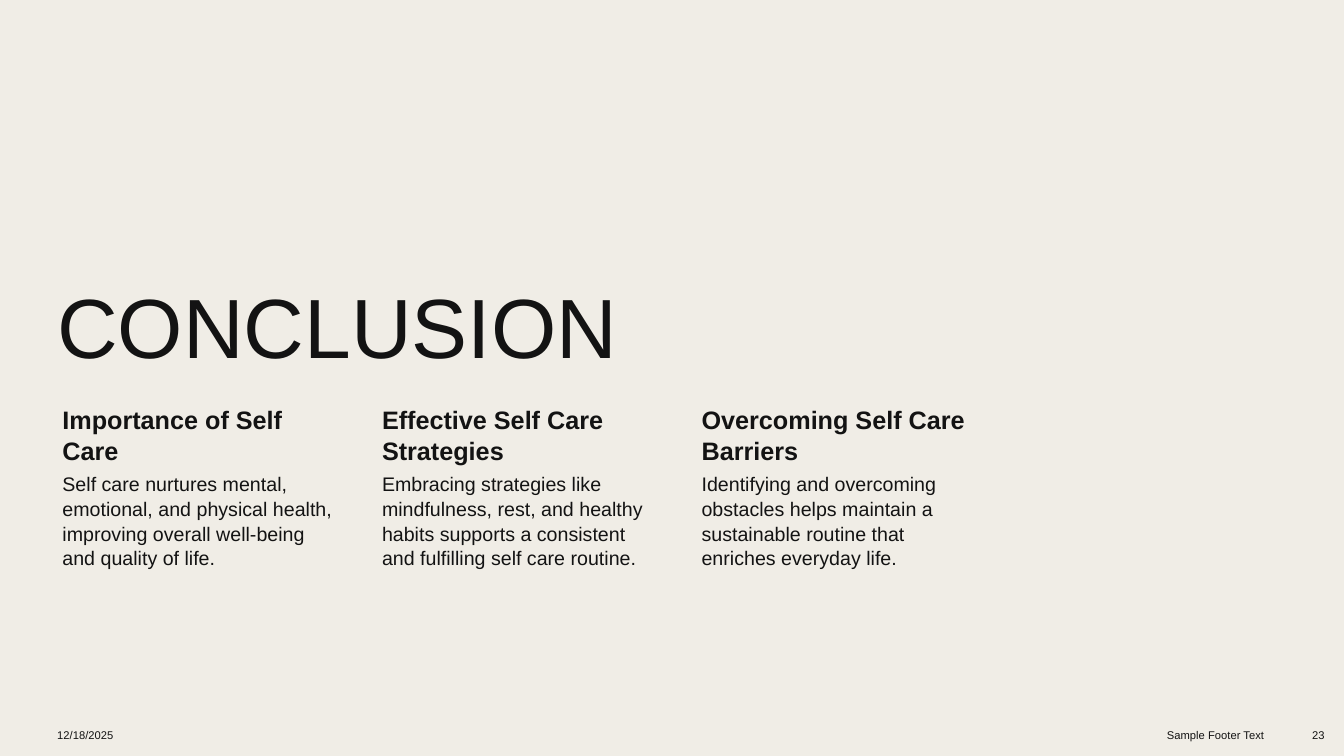
from pptx import Presentation
from pptx.dml.color import RGBColor
from pptx.enum.text import MSO_ANCHOR, PP_ALIGN
from pptx.util import Pt

COLORS = {"paper": "F0EDE6", "ink": "131313"}
FONT = "Arial"
POINTS = [
    ("Importance of Self Care",
     "Self care nurtures mental, emotional, and physical health, "
     "improving overall well-being and quality of life."),
    ("Effective Self Care Strategies",
     "Embracing strategies like mindfulness, rest, and healthy habits "
     "supports a consistent and fulfilling self care routine."),
    ("Overcoming Self Care Barriers",
     "Identifying and overcoming obstacles helps maintain a "
     "sustainable routine that enriches everyday life."),
]


def write(slide, text, box, size, bold=False, align=PP_ALIGN.LEFT,
          anchor=MSO_ANCHOR.TOP, inset=(7.2, 3.6, 7.2, 3.6), line=1.05, after=0):
    frame = slide.shapes.add_textbox(*map(Pt, box)).text_frame
    frame.word_wrap = True
    frame.vertical_anchor = anchor
    (frame.margin_left, frame.margin_top,
     frame.margin_right, frame.margin_bottom) = map(Pt, inset)
    para = frame.paragraphs[0]
    para.alignment = align
    para.line_spacing = line
    para.space_after = Pt(after)
    run = para.add_run()
    run.text = text
    font = run.font
    font.name, font.size, font.bold = FONT, Pt(size), bold
    font.color.rgb = RGBColor.from_string(COLORS["ink"])


def add_title(slide, box):
    write(slide, "CONCLUSION", box, 60, anchor=MSO_ANCHOR.BOTTOM, line=0.9)


def add_points(slide, box):
    left, top, width, height = box
    gap, head = 20.9, 50
    wide = (width - gap * (len(POINTS) - 1)) / len(POINTS)
    for i, (title, body) in enumerate(POINTS):
        x = left + i * (wide + gap)
        write(slide, title, (x, top, wide, head), 18, bold=True,
              inset=(10.8, 2.2, 2.2, 2.2))
        write(slide, body, (x, top + head, wide, height - head), 14,
              inset=(10.8, 1.4, 1.4, 1.4))


def add_footer(slide, box):
    left, top, width, height = box
    right = left + width
    for text, x, wide, align in [
        ("12/18/2025", left, 224, PP_ALIGN.LEFT),
        ("Sample Footer Text", right - 252.7, 209.5, PP_ALIGN.RIGHT),
        ("23", right - 36, 36, PP_ALIGN.RIGHT),
    ]:
        write(slide, text, (x, top, wide, height), 8, align=align,
              anchor=MSO_ANCHOR.MIDDLE, after=6)


def main():
    deck = Presentation()
    deck.slide_width, deck.slide_height = Pt(960), Pt(540)
    slide = deck.slides.add_slide(deck.slide_layouts[6])
    fill = slide.background.fill
    fill.solid()
    fill.fore_color.rgb = RGBColor.from_string(COLORS["paper"])
    add_title(slide, (33.8, 128.2, 663.9, 144.7))
    add_points(slide, (33.8, 285.2, 663.9, 144.5))
    add_footer(slide, (33.8, 511.2, 919.5, 26.6))
    deck.save("out.pptx")


if __name__ == "__main__":
    main()
